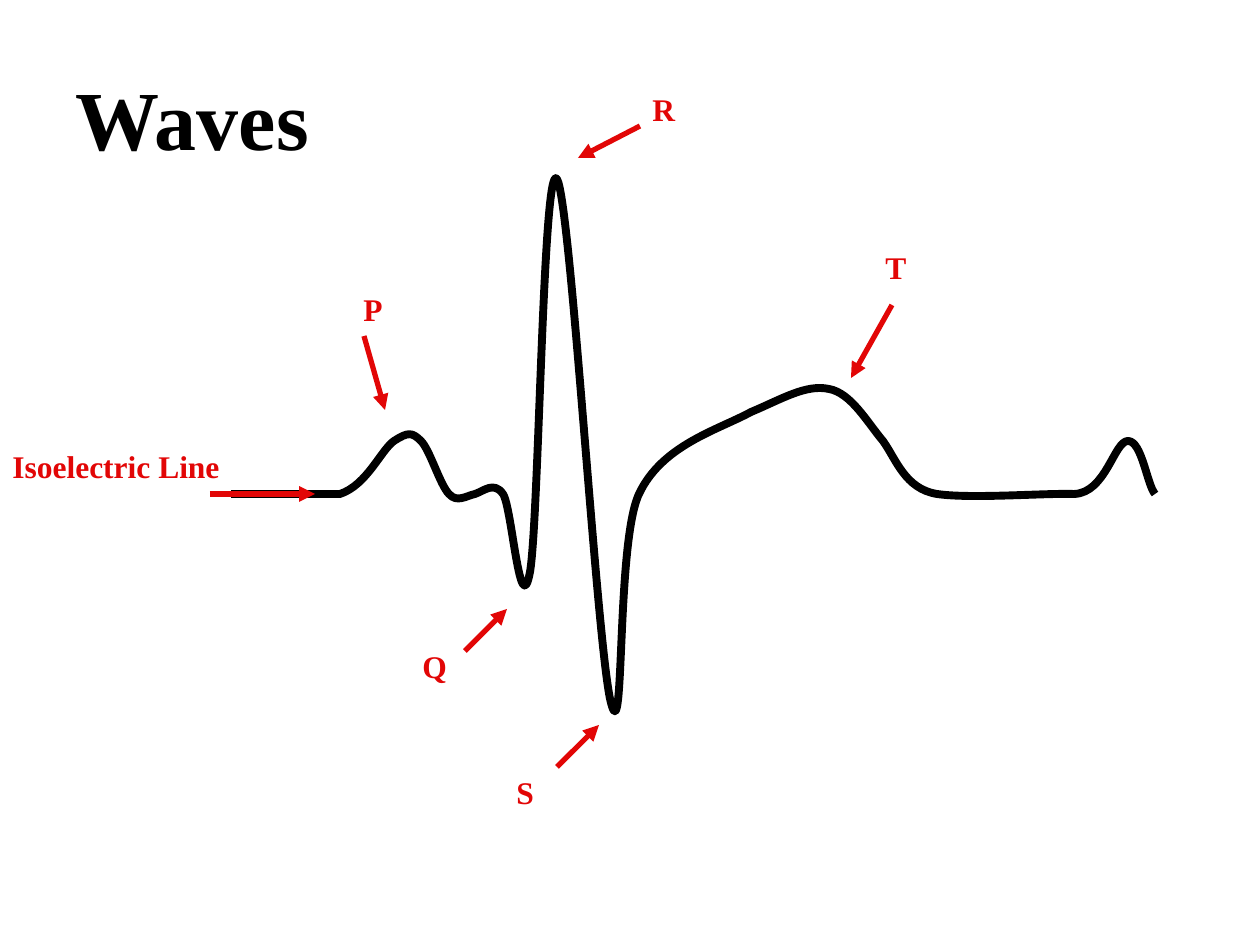
from itertools import chain

from lxml import etree
from pptx import Presentation, util as u
from pptx.dml.color import RGBColor
from pptx.enum import shapes, text
from pptx.oxml.ns import qn

PX = u.Inches(1) / 126


def px(value):
    return u.Emu(round(value * PX))


def color(hex_code):
    return RGBColor.from_string(hex_code)


def write(frame, words, size=18, ink="E20606", align=None, font="Times New Roman"):
    paragraph = frame.paragraphs[0]
    paragraph.alignment = align
    run = paragraph.add_run()
    run.text = words
    run.font.name = font
    run.font.size = u.Pt(size)
    run.font.bold = True
    run.font.color.rgb = color(ink)


def bend(outline):
    """Turn every three line segments after the first into one cubic curve."""
    path = outline._element.find(".//" + qn("a:path"))
    segments = path.findall(qn("a:lnTo"))[1:]
    for index in range(0, len(segments), 3):
        curve = etree.SubElement(path, qn("a:cubicBezTo"))
        for segment in segments[index:index + 3]:
            curve.append(segment[0])
            path.remove(segment)


class WaveSlide:
    TRACE = "000000"
    MARK = "E20606"

    def __init__(self, deck):
        self.slide = deck.slides.add_slide(deck.slide_layouts[5])

    def title(self, words, left, top, width, height):
        heading = self.slide.shapes.title
        heading.left, heading.top = px(left), px(top)
        heading.width, heading.height = px(width), px(height)
        frame = heading.text_frame
        frame.vertical_anchor = text.MSO_ANCHOR.MIDDLE
        frame.word_wrap = True
        write(frame, words, size=48, ink=self.TRACE, align=text.PP_ALIGN.LEFT)

    def label(self, group, words, left, top, width, align):
        box = group.shapes.add_textbox(px(left), px(top), px(width), px(50))
        frame = box.text_frame
        frame.word_wrap = False
        frame.auto_size = text.MSO_AUTO_SIZE.SHAPE_TO_FIT_TEXT
        write(frame, words, ink=self.MARK, align=align)

    def arrow(self, group, start, end):
        pointer = group.shapes.add_connector(
            shapes.MSO_CONNECTOR.STRAIGHT, *map(px, start + end))
        pointer.line.color.rgb = color(self.MARK)
        pointer.line.width = u.Pt(3)
        etree.SubElement(pointer.line._get_or_add_ln(), qn("a:tailEnd"), type="triangle")
        etree.SubElement(pointer._element.spPr, qn("a:effectLst"))

    def callout(self, words, left, top, width, start, end, align=text.PP_ALIGN.LEFT):
        """Group a label with the arrow to its wave."""
        group = self.slide.shapes.add_group_shape()
        self.label(group, words, left, top, width, align)
        self.arrow(group, start, end)

    def trace(self, start, baseline_end, curves):
        """Draw a flat line followed by curves of two controls and an end."""
        points = [baseline_end, *chain.from_iterable(curves)]
        builder = self.slide.shapes.build_freeform(*map(px, start))
        builder.add_line_segments([(px(x), px(y)) for x, y in points], close=False)
        outline = builder.convert_to_shape()
        bend(outline)
        outline.shadow.inherit = False
        outline.fill.background()
        outline.line.color.rgb = color(self.TRACE)
        outline.line.width = u.Pt(4.5)


HEARTBEAT = [
    # P wave
    ((367, 485), (381, 450), (394, 441)),
    ((408, 432), (412, 432), (421, 441)),
    ((430, 450), (440, 485), (449, 494)),
    ((457, 503), (466, 496), (475, 494)),
    # QRS complex
    ((484, 491), (494, 481), (503, 494)),
    ((512, 507), (520, 625), (530, 572)),
    ((539, 520), (543, 158), (557, 179)),
    ((571, 202), (597, 651), (611, 703)),
    ((625, 756), (616, 543), (639, 494)),
    # T wave
    ((662, 445), (718, 430), (751, 412)),
    ((782, 399), (806, 384), (829, 389)),
    ((851, 393), (867, 422), (883, 441)),
    ((896, 459), (905, 489), (937, 494)),
    # Next beat
    ((971, 499), (1045, 493), (1074, 494)),
    ((1106, 493), (1114, 441), (1128, 441)),
    ((1142, 441), (1147, 485), (1155, 494)),
]


def main():
    deck = Presentation()
    deck.slide_width, deck.slide_height = u.Inches(10), u.Inches(7.5)
    waves = WaveSlide(deck)
    waves.title("Waves", 63, 38, 260, 158)
    waves.callout("P", 350, 284, 45, (364, 336), (385, 410), text.PP_ALIGN.RIGHT)
    waves.callout("T", 873, 242, 46, (892, 305), (851, 378))
    waves.callout("R", 640, 84, 48, (640, 126), (578, 158))
    waves.trace((231, 494), (340, 494), HEARTBEAT)
    waves.callout("Q", 410, 641, 50, (465, 651), (507, 609))
    waves.callout("S", 504, 767, 43, (557, 767), (599, 725))
    waves.callout("Isoelectric Line", 0, 441, 234, (210, 494), (315, 494))
    deck.save("out.pptx")


if __name__ == "__main__":
    main()
